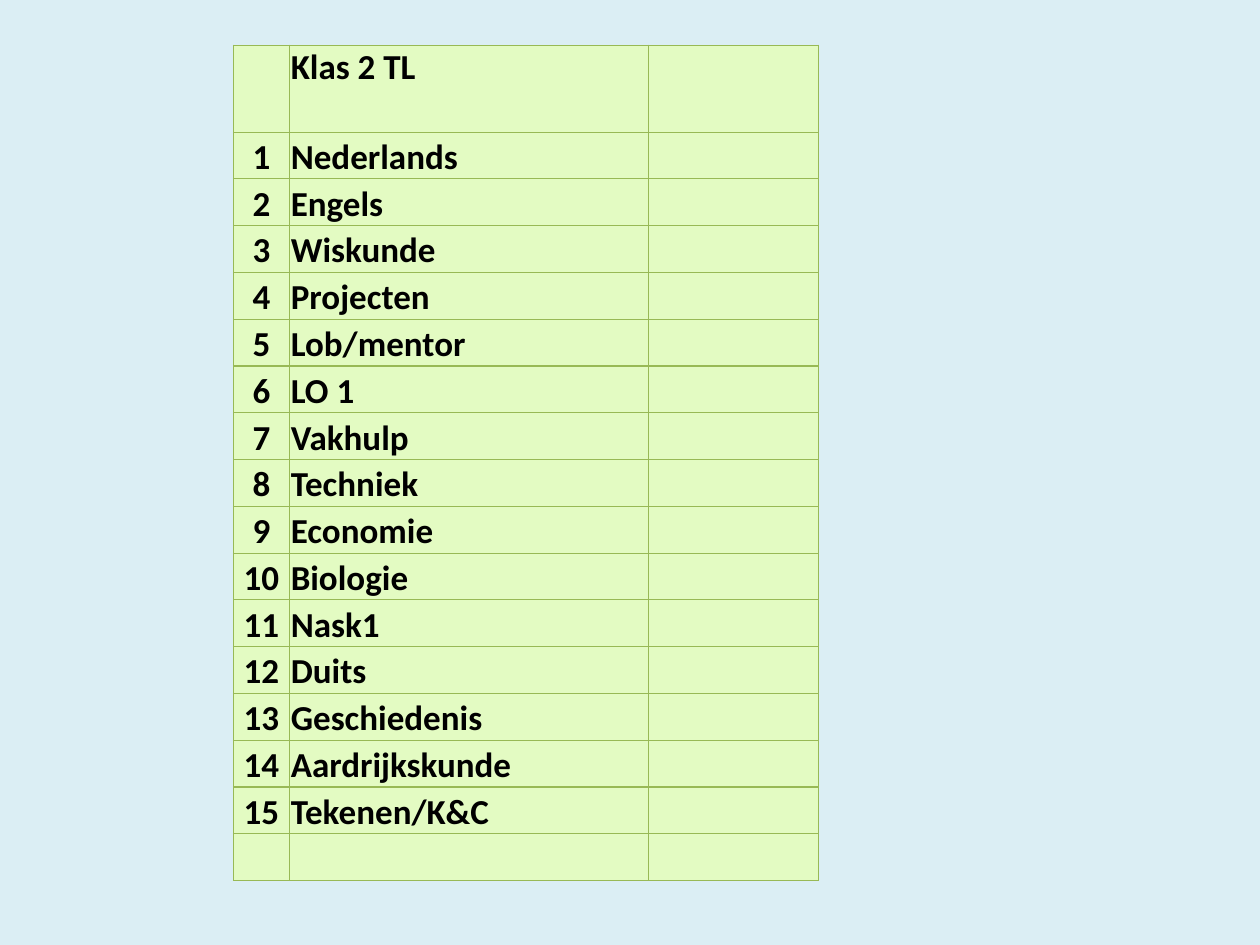
from pptx import Presentation
from pptx.dml.color import RGBColor
from pptx.enum import text
from pptx.oxml import parse_xml
from pptx.oxml.ns import nsdecls
from pptx.util import Pt

# Content
CLASS_NAME = "Klas 2 TL"
SUBJECTS = [
    "Nederlands", "Engels", "Wiskunde", "Projecten", "Lob/mentor",
    "LO 1", "Vakhulp", "Techniek", "Economie", "Biologie", "Nask1",
    "Duits", "Geschiedenis", "Aardrijkskunde", "Tekenen/K&C",
]

# Style and layout, in points
BACKGROUND = RGBColor(0xDB, 0xEE, 0xF4)
CELL_FILL = RGBColor(0xE3, 0xFB, 0xC2)
BORDER = RGBColor(0x98, 0xB9, 0x55)
BLACK = RGBColor(0, 0, 0)
LEFT, TOP = 133.3, 25.8
COLUMN_WIDTHS = [32.2, 205, 97.2]
HEADER_HEIGHT, ROW_HEIGHT = 49.7, 26.75


def add_borders(cell):
    properties = cell._tc.get_or_add_tcPr()
    for side in ("lnL", "lnR", "lnT", "lnB"):
        properties.append(parse_xml(
            f'<a:{side} {nsdecls("a")} w="{Pt(0.75)}"><a:solidFill>'
            f'<a:srgbClr val="{BORDER}"/></a:solidFill></a:{side}>'))


def fill_cell(cell, words, anchor, alignment):
    cell.margin_left = cell.margin_right = cell.margin_top = Pt(0.7)
    cell.margin_bottom = Pt(0)
    cell.vertical_anchor = anchor
    add_borders(cell)
    cell.fill.solid()
    cell.fill.fore_color.rgb = CELL_FILL
    if words:
        paragraph = cell.text_frame.paragraphs[0]
        paragraph.alignment = alignment
        run = paragraph.add_run()
        run.text = words
        run.font.name = "Calibri"
        run.font.size = Pt(20)
        run.font.bold = True
        run.font.color.rgb = BLACK


prs = Presentation()
prs.slide_width, prs.slide_height = Pt(720), Pt(540)
slide = prs.slides.add_slide(prs.slide_layouts[6])
slide.background.fill.solid()
slide.background.fill.fore_color.rgb = BACKGROUND

# Header, numbered subjects and an empty closing row
rows = [("", CLASS_NAME, "")]
rows += [(str(number), subject, "") for number, subject in enumerate(SUBJECTS, 1)]
rows.append(("", "", ""))
heights = [HEADER_HEIGHT] + [ROW_HEIGHT] * (len(rows) - 1)

subject_table = slide.shapes.add_table(
    len(rows), len(COLUMN_WIDTHS), Pt(LEFT), Pt(TOP),
    Pt(sum(COLUMN_WIDTHS)), Pt(sum(heights))).table
for column, width in zip(subject_table.columns, COLUMN_WIDTHS):
    column.width = Pt(width)

alignments = [text.PP_ALIGN.CENTER, text.PP_ALIGN.LEFT, text.PP_ALIGN.LEFT]
for r, (row, height) in enumerate(zip(rows, heights)):
    subject_table.rows[r].height = Pt(height)
    anchor = text.MSO_ANCHOR.BOTTOM if r else text.MSO_ANCHOR.TOP
    for c, (words, alignment) in enumerate(zip(row, alignments)):
        fill_cell(subject_table.cell(r, c), words, anchor, alignment)

prs.save("out.pptx")
